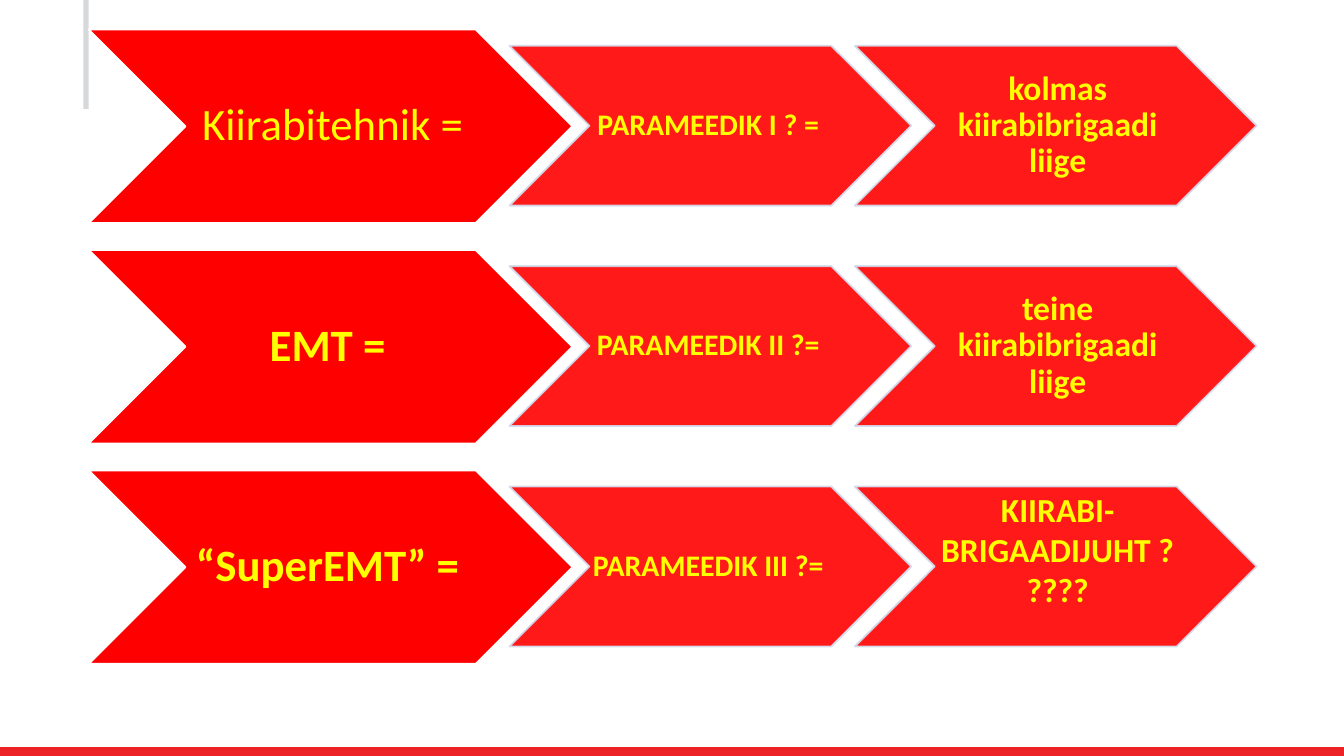
import pptx
import pptx.util
import pptx.dml.color
import pptx.enum.shapes
import pptx.enum.text
import pptx.oxml.ns
import lxml.etree

KIND = pptx.enum.shapes.MSO_SHAPE
COLS, ROWS = 100, 56.25
RED, YELLOW, PALE = "FF0000", "FFFF00", "D2DEEF"


def paint(fill, tint, alpha=100):
    """Fill with a hex colour at a percentage of opacity."""
    fill.solid()
    fill.fore_color.rgb = pptx.dml.color.RGBColor.from_string(tint)
    if alpha < 100:
        node = fill._xPr.find(".//" + pptx.oxml.ns.qn("a:srgbClr"))
        mark = lxml.etree.SubElement(node, pptx.oxml.ns.qn("a:alpha"))
        mark.set("val", str(alpha * 1000))


class Deck:
    """Hold the style and the current slide."""

    def __init__(self):
        """Open a 16:9 deck with one blank slide."""
        self.file = pptx.Presentation()
        self.file.slide_width = pptx.util.Inches(10)
        self.file.slide_height = pptx.util.Inches(10 * 9 / 16)
        self.slide = self.file.slides.add_slide(self.file.slide_layouts[6])
        self.font = {"name": "Calibri"}
        self.frame = {
            "word_wrap": True,
            "vertical_anchor": pptx.enum.text.MSO_ANCHOR.MIDDLE,
            "margin_top": pptx.util.Inches(0.01),
            "margin_right": 0,
        }

    def shape(self, kind, left, top, wide, high, tint, alpha=100):
        """Add a filled shape placed in grid columns and rows."""
        col = self.file.slide_width / COLS
        row = self.file.slide_height / ROWS
        item = self.slide.shapes.add_shape(
            kind, int(left * col), int(top * row), int(wide * col), int(high * row))
        item.shadow.inherit = False
        paint(item.fill, tint, alpha)
        return item

    def bar(self, left, top, wide, high, tint):
        """Add a plain bar without an outline."""
        self.shape(KIND.RECTANGLE, left, top, wide, high, tint).line.fill.background()

    def arrow(self, place, text, size, edge, alpha=100, bold=True, inset=0.03, foot=0.01, space=0.9):
        """Add a chevron with its label."""
        item = self.shape(KIND.CHEVRON, *place, RED, alpha)
        item.line.width = pptx.util.Pt(1)
        paint(item.line.fill, edge, alpha)
        frame = item.text_frame
        para = frame.paragraphs[0]
        run = para.add_run()
        run.text = text
        paint(run.font.fill, YELLOW)
        edges = {"margin_left": pptx.util.Inches(inset), "margin_bottom": pptx.util.Inches(foot)}
        looks = (
            (frame, {**self.frame, **edges}),
            (para, {"alignment": pptx.enum.text.PP_ALIGN.CENTER, "line_spacing": space}),
            (run.font, {**self.font, "size": pptx.util.Pt(size), "bold": bold}),
        )
        for part, look in looks:
            for key, value in look.items():
                setattr(part, key, value)


def main():
    """Build the slide of roles and save it."""
    deck = Deck()
    for top, high in ((55.6, 0.65), (55.7, 0.55)):
        deck.bar(0, top, COLS, high, "EC2227")
    deck.bar(6.2, 0, 0.4, 8.1, "D6D8D9")
    roles = (
        ("Kiirabitehnik =", "PARAMEEDIK I ? = ", "kolmas kiirabibrigaadi liige", {}),
        ("EMT = ", "PARAMEEDIK II ?= ", "teine kiirabibrigaadi liige", {}),
        ("“SuperEMT” = ", "PARAMEEDIK III ?= ", "KIIRABI-BRIGAADIJUHT ?????",
         {"foot": 0.27, "space": 1.0}),
    )
    for index, (role, grade, duty, look) in enumerate(roles):
        top = 2.2 + 16.4 * index
        deck.arrow((6.6, top, 36, 14.4), role, 24, "FFFFFF", bold=index > 0)
        deck.arrow((37.9, top + 1.2, 29.9, 11.9), grade, 16, PALE, 90, inset=0.02)
        deck.arrow((63.6, top + 1.2, 29.9, 11.9), duty, 18, PALE, 90, **look)
    deck.file.save("out.pptx")


if __name__ == "__main__":
    main()
